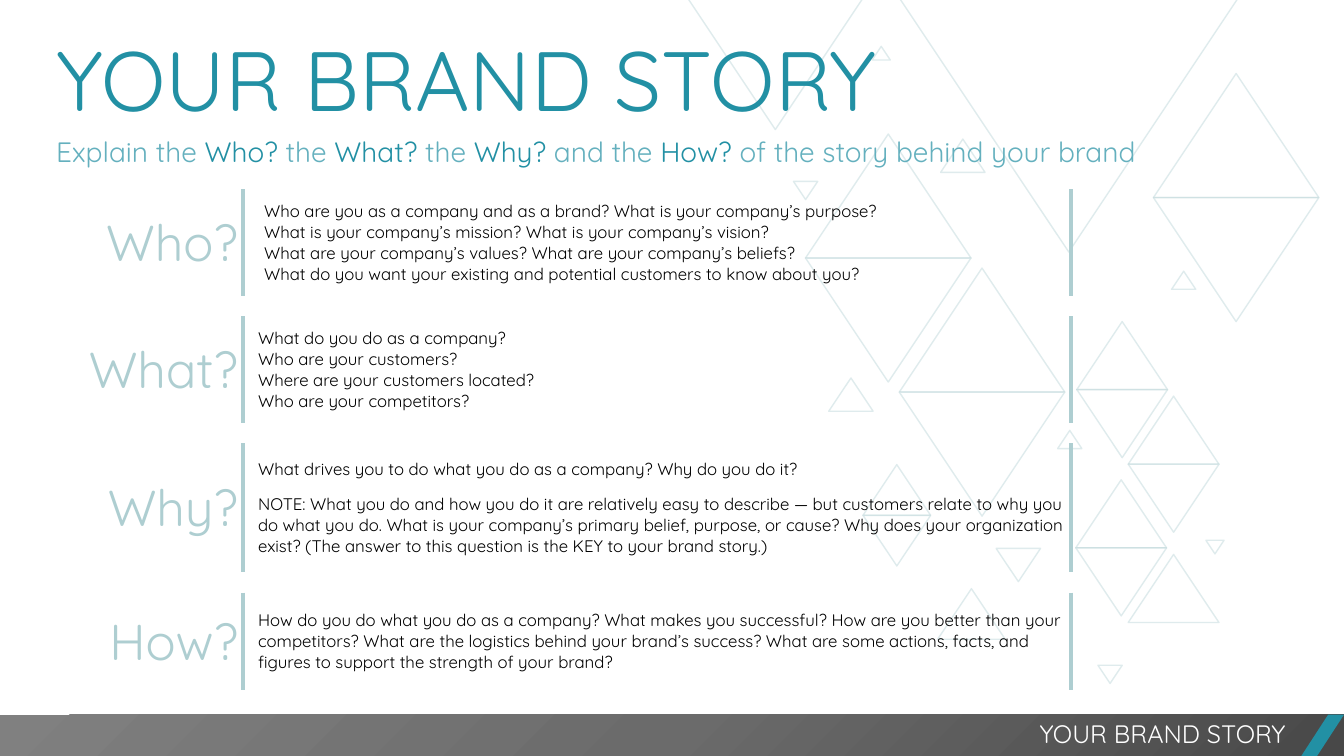
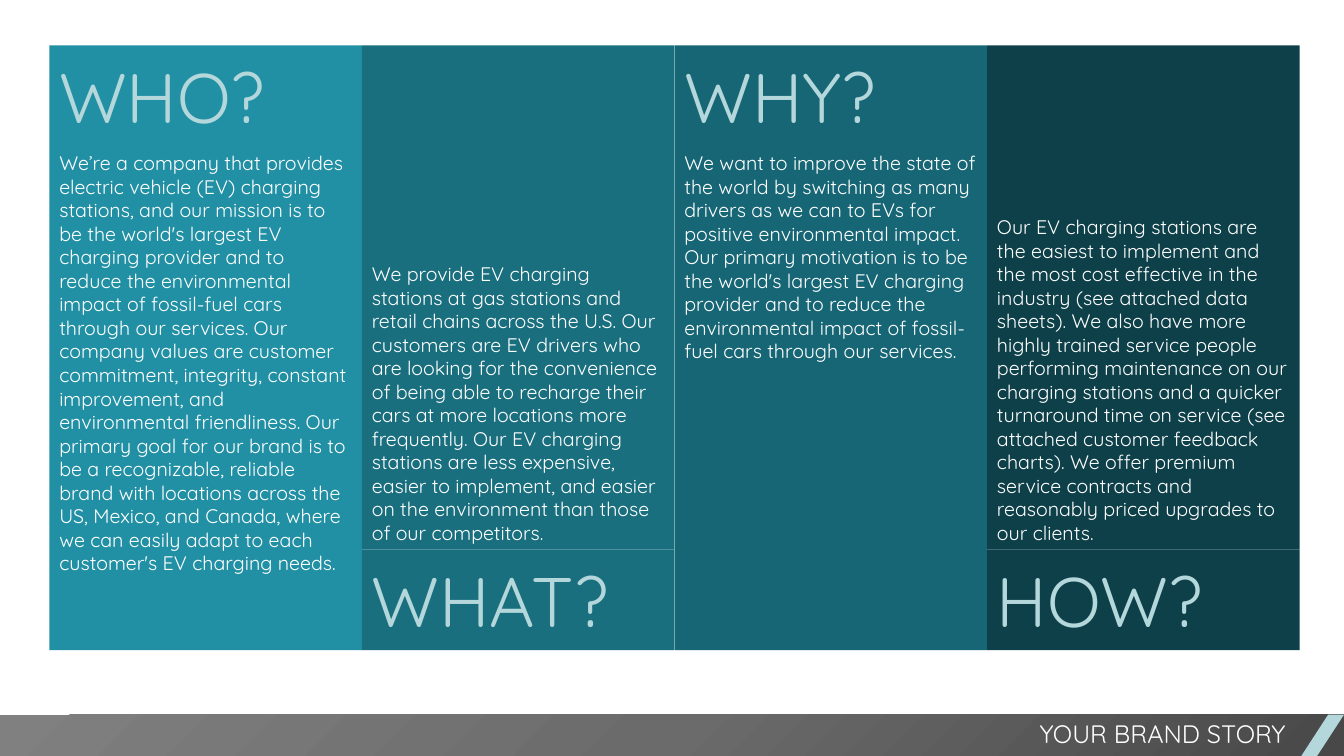
from lxml.etree import SubElement
from pptx import Presentation
from pptx.dml.color import RGBColor
from pptx.enum.shapes import MSO_SHAPE as SHAPE
from pptx.enum.text import MSO_ANCHOR as ANCHOR, PP_ALIGN as ALIGN
from pptx.oxml import parse_xml
from pptx.oxml.ns import nsdecls, qn
from pptx.util import Inches, Pt

FONT = "Quicksand"
TEAL = RGBColor(0x22, 0x90, 0xA4)
TEAL_SOFT = RGBColor(0x64, 0xB0, 0xBE)
TEAL_MID = RGBColor(0x1A, 0x6F, 0x7F)
TEAL_DEEP = RGBColor(0x17, 0x66, 0x75)
TEAL_DARK = RGBColor(0x0E, 0x40, 0x49)
MIST = RGBColor(0xAE, 0xCE, 0xD1)
ICE = RGBColor(0xB4, 0xD7, 0xDB)
WHITE = RGBColor(0xFF, 0xFF, 0xFF)
BLACK = RGBColor(0, 0, 0)
NO_STYLE = "{2D5ABB26-0587-4C30-8999-92F81FD0307C}"
BAND_FILL = f"""<a:gradFill {nsdecls('a')}><a:gsLst>
<a:gs pos="0"><a:srgbClr val="484848"/></a:gs>
<a:gs pos="50000"><a:srgbClr val="6B6B6B"/></a:gs>
<a:gs pos="100000"><a:srgbClr val="808080"/></a:gs></a:gsLst>
<a:path path="circle"><a:fillToRect l="100000" t="100000"/></a:path></a:gradFill>"""

prs = Presentation()
prs.slide_width, prs.slide_height = Inches(13.33), Inches(7.5)
COL, ROW = prs.slide_width / 13.33, prs.slide_height / 7.5


def shape(shapes, kind, x, y, w, h, color):
    box = [round(v) for v in (x * COL, y * ROW, w * COL, h * ROW)]
    if kind is None:
        sp = shapes.add_textbox(*box)
    else:
        sp = shapes.add_shape(kind, *box)
        sp.shadow.inherit = False
        sp.fill.solid()
        sp.fill.fore_color.rgb = color
        sp.line.fill.background()
    return sp


def write(tf, text, size, color, align=ALIGN.LEFT, anchor=ANCHOR.TOP, wrap=True):
    tf.text = text
    tf.word_wrap = wrap
    tf.vertical_anchor = anchor
    for p in tf.paragraphs:
        p.alignment = align
        p.font.name, p.font.size = FONT, Pt(size)
        p.font.color.rgb = color


story, example = [prs.slides.add_slide(prs.slide_layouts[6]) for _ in range(2)]

diamonds = [(7.99, 1.33, 1.64), (8.92, 2.66, 1.64), (11.44, 0.73, 1.64), (10.67, 4.76, 0.9),
            (10.68, 3.19, 0.9), (11.19, 3.93, 0.9), (8.56, 4.61, 0.67)]
pointing_down = [(8.92, -0.02, 3.36), (9.88, 5.44, 0.44), (10.89, 6.6, 0.24), (7.87, 1.8, 0.24),
                 (11.96, 5.36, 0.18), (6.82, -0.02, 1.74)]
pointing_up = [(11.19, 5.5, 0.9), (9.3, 5.84, 0.67), (8.22, 3.75, 0.44), (10.49, 4.27, 0.24),
               (11.62, 2.69, 0.24), (8.65, 0.46, 0.18), (9.33, 1.38, 0.44)]
triangles = []
for x, y, w in diamonds:
    triangles += [(x, y, w, 0), (x, y + 0.75 * w, w, 180)]
triangles += [(*t, 180) for t in pointing_down] + [(*t, 0) for t in pointing_up]

pattern = story.shapes.add_group_shape().shapes
for x, y, w, turn in triangles:
    sp = shape(pattern, SHAPE.ISOSCELES_TRIANGLE, x, y, w, 0.75 * w, WHITE)
    sp.rotation = turn
    sp.line.color.rgb, sp.line.width = MIST, Pt(1)
    for clr, alpha in zip(sp._element.spPr.iter(qn("a:srgbClr")), ("52000", "38000")):
        SubElement(clr, qn("a:alpha")).set("val", alpha)

for s, accent in ((story, TEAL), (example, ICE)):
    band = shape(s.shapes, SHAPE.RECTANGLE, 0, 7.09, 13.33, 0.42, BLACK)
    solid = band._element.spPr.find(qn("a:solidFill"))
    solid.getparent().replace(solid, parse_xml(BAND_FILL))
    slant = shape(s.shapes, SHAPE.PARALLELOGRAM, 12.9, 7.09, 0.43, 0.42, accent)
    slant.adjustments[0] = 0.65
    footer = shape(s.shapes, None, 5.25, 7.08, 7.6, 0.4, None)
    write(footer.text_frame, "YOUR BRAND STORY", 18, WHITE, ALIGN.RIGHT)

title = shape(story.shapes, None, 0.46, 0.22, 8.34, 1.11, None)
write(title.text_frame, "YOUR BRAND STORY", 60, TEAL, wrap=False)

subtitle = shape(story.shapes, None, 0.46, 1.29, 12.74, 0.44, None)
write(subtitle.text_frame, "", 20, TEAL_SOFT)
p = subtitle.text_frame.paragraphs[0]
for i, text in enumerate(["Explain the ", "Who? ", "the", " What? ", "the", " Why? ",
                          "and the ", "How? ", "of the story behind your brand"]):
    r = p.add_run()
    r.text = text
    r.font.color.rgb = TEAL if i % 2 else TEAL_SOFT

questions = [
    ("Who?", 1.06, 0.06, 0,
     "Who are you as a company and as a brand? What is your company’s purpose?\n"
     "What is your company’s mission? What is your company’s vision?\n"
     "What are your company’s values? What are your company’s beliefs?\n"
     "What do you want your existing and potential customers to know about you?"),
    ("What?", 1.06, 0, 0,
     "What do you do as a company?\nWho are your customers?\n"
     "Where are your customers located?\nWho are your competitors?"),
    ("Why?", 1.28, 0, 10,
     "What drives you to do what you do as a company? Why do you do it?\n"
     "NOTE: What you do and how you do it are relatively easy to describe — but customers "
     "relate to why you do what you do. What is your company’s primary belief, purpose, or "
     "cause? Why does your organization exist? (The answer to this question is the KEY to "
     "your brand story.)"),
    ("How?", 0.97, 0, 0,
     "How do you do what you do as a company? What makes you successful? How are you better "
     "than your competitors? What are the logistics behind your brand’s success? What are "
     "some actions, facts, and figures to support the strength of your brand?"),
]
GAP = 0.2
widths = [1.95, 8.21, 0.23]
heights = [GAP] * (2 * len(questions) - 1)
heights[::2] = [q[1] for q in questions]
frame = story.shapes.add_table(len(heights), len(widths), round(0.46 * COL), round(1.88 * ROW),
                               round(sum(widths) * COL), round(sum(heights) * ROW))
table = frame.table
table.first_row = table.horz_banding = False
table._tbl.tblPr.find(qn("a:tableStyleId")).text = NO_STYLE
for column, w in zip(table.columns, widths):
    column.width = round(w * COL)
for row, h in zip(table.rows, heights):
    row.height = round(h * ROW)
for cell in table.iter_cells():
    cell.fill.background()
    cell.margin_top = cell.margin_bottom = 0
    cell.margin_left = cell.margin_right = round(0.05 * COL)
    if not cell.text:
        SubElement(cell.text_frame.paragraphs[0]._p, qn("a:endParaRPr")).set("sz", "800")

for i, (label, _, indent, gap, text) in enumerate(questions):
    name, answer = table.cell(2 * i, 0), table.cell(2 * i, 1)
    answer.margin_left = round((0.15 + indent) * COL)
    for cell, side, content, size, color, align in (
            (name, "R", label, 36, MIST, ALIGN.RIGHT),
            (answer, "L", text, 12, BLACK, ALIGN.LEFT)):
        write(cell.text_frame, content, size, color, align)
        cell.vertical_anchor = ANCHOR.MIDDLE
        cell._tc.tcPr.insert(0, parse_xml(
            f'<a:ln{side} {nsdecls("a")} w="{Pt(3)}"><a:solidFill><a:srgbClr val="{MIST}"/>'
            f'</a:solidFill></a:ln{side}>'))
    answer.text_frame.paragraphs[0].space_after = Pt(gap)

panels = [
    ("WHO?", TEAL,
     "We’re a company that provides electric vehicle (EV) charging stations, and our mission "
     "is to be the world's largest EV charging provider and to reduce the environmental impact "
     "of fossil-fuel cars through our services. Our company values are customer commitment, "
     "integrity, constant improvement, and environmental friendliness. Our primary goal for our "
     "brand is to be a recognizable, reliable brand with locations across the US, Mexico, and "
     "Canada, where we can easily adapt to each customer's EV charging needs."),
    ("WHAT?", TEAL_MID,
     "We provide EV charging stations at gas stations and retail chains across the U.S. Our "
     "customers are EV drivers who are looking for the convenience of being able to recharge "
     "their cars at more locations more frequently. Our EV charging stations are less expensive, "
     "easier to implement, and easier on the environment than those of our competitors."),
    ("WHY?", TEAL_DEEP,
     "We want to improve the state of the world by switching as many drivers as we can to EVs "
     "for positive environmental impact. Our primary motivation is to be the world's largest EV "
     "charging provider and to reduce the environmental impact of fossil-fuel cars through our "
     "services."),
    ("HOW?", TEAL_DARK,
     "Our EV charging stations are the easiest to implement and the most cost effective in the "
     "industry (see attached data sheets). We also have more highly trained service people "
     "performing maintenance on our charging stations and a quicker turnaround time on service "
     "(see attached customer feedback charts). We offer premium service contracts and reasonably "
     "priced upgrades to our clients."),
]
PANEL_W, HEAD_H, BODY_H, TOP = 3.1, 1, 5, 0.45
for i, (heading, color, text) in enumerate(panels):
    x = 0.49 + i * PANEL_W
    if i % 2:
        head_y, body_y, anchor = TOP + BODY_H, TOP, ANCHOR.BOTTOM
    else:
        head_y, body_y, anchor = TOP, TOP + HEAD_H, ANCHOR.TOP
    head = shape(example.shapes, SHAPE.RECTANGLE, x, head_y, PANEL_W, HEAD_H, color)
    write(head.text_frame, heading, 50, ICE, anchor=ANCHOR.MIDDLE)
    body = shape(example.shapes, SHAPE.RECTANGLE, x, body_y, PANEL_W, BODY_H, color)
    write(body.text_frame, text, 14, WHITE, anchor=anchor)

prs.save("out.pptx")
